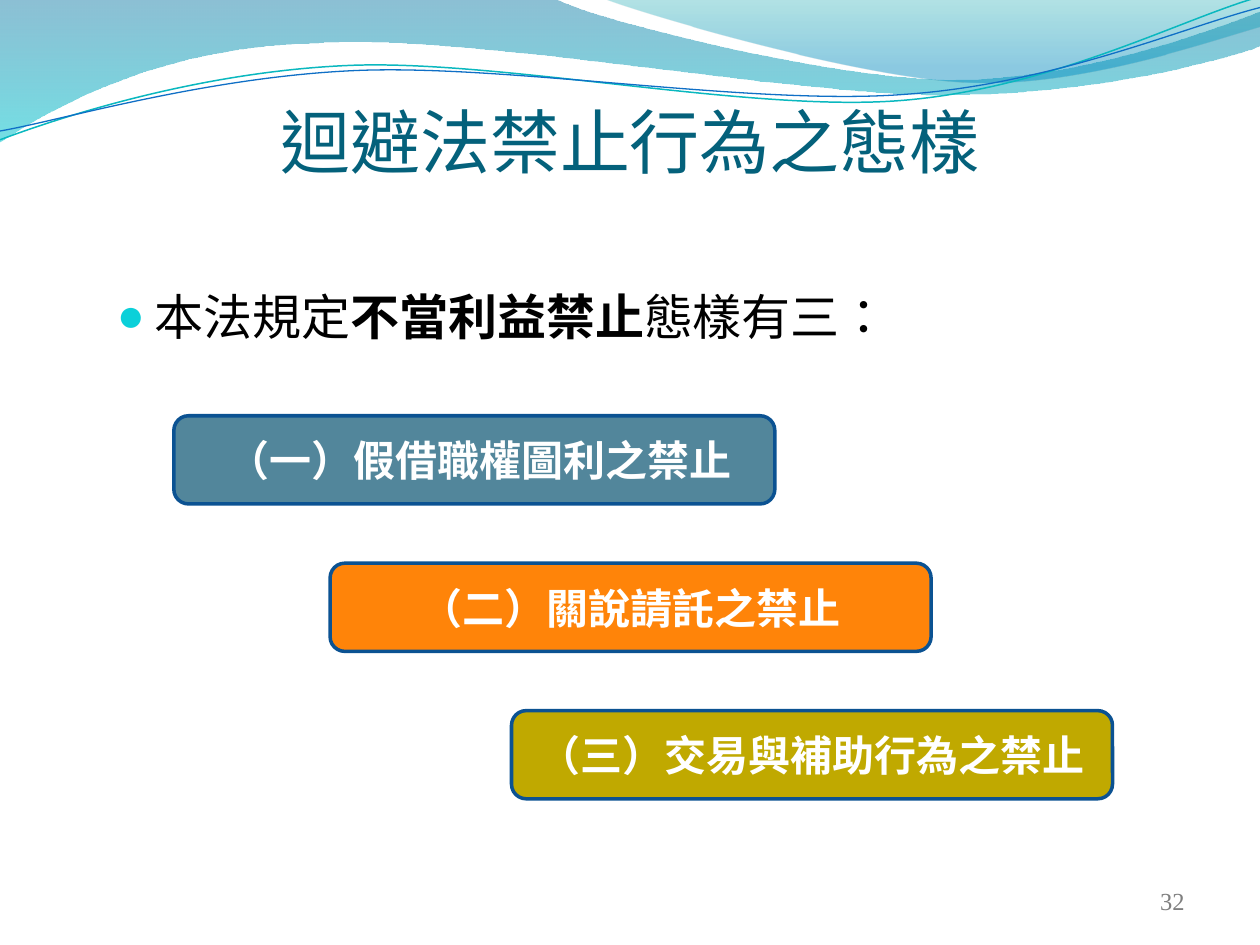
from lxml import etree
from pptx import Presentation, util as u
from pptx.dml.color import RGBColor
from pptx.enum import shapes, text
from pptx.oxml import ns, parse_xml

WIDE, HIGH = 10, 7.5
HAN = "Noto Sans CJK SC"
HUES = {"title": "04617B", "body": "000000", "white": "FFFFFF", "page": "7F7F7F",
        "edge": "0B5292", "dot": "0BD0D9", "slate": "004E6C", "orange": "FF8409",
        "olive": "C0A900", "teal": "0AB8BF", "blue": "0F6FC6"}

# Waves: a start point, then steps of one point (line) or three (curve)
BANDS = [
    ([(0, 0), [(4.4, -0.01)],
      [(4.76, 0.17), (6.64, 0.63), (7.58, 0.63)],
      [(8.53, 0.63), (9.58, 0.26), (10, 0.09)], [(10.01, 0.36)],
      [(9.83, 0.44), (8.7, 0.76), (7.46, 0.75)],
      [(6.22, 0.75), (3.82, 0.28), (2.57, 0.34)],
      [(1.29, 0.36), (0.46, 0.83), (-0.01, 1.13)], [(0, 0)]],
     [(0, "0074A1", 45), (100, "00C6CF", 55)]),
    ([(4.79, -0.01), [(5.09, 0.11), (6.82, 0.62), (7.69, 0.65)],
      [(8.56, 0.69), (9.61, 0.32), (10, 0.21)], [(10, 0)], [(4.79, -0.01)]],
     [(0, "00A1A9", 30), (80, "008BBF", 45)]),
]
LINES = [
    ([(0, 1.11), [(0.48, 0.93), (1.58, 0.57), (2.77, 0.52)],
      [(3.95, 0.47), (5.93, 0.89), (7.13, 0.8)],
      [(8.33, 0.71), (9.38, 0.15), (9.98, -0.02)]], "teal", 0.85),
    ([(0, 1.04), [(0.47, 0.96), (1.64, 0.61), (2.83, 0.56)],
      [(4.03, 0.51), (5.97, 0.84), (7.17, 0.75)],
      [(8.36, 0.67), (9.41, 0.21), (10, 0.06)]], "blue", 0.75),
]


def hue(name):
    return RGBColor.from_string(HUES[name])


def put(obj, vals):
    for key, val in vals.items():
        setattr(obj, key, val)


def area(x, y, w, h):
    """Turn shares of the slide into lengths."""
    return [u.Inches(round(n * side, 2))
            for n, side in zip((x, y, w, h), (WIDE, HIGH) * 2)]


def wave(slide, path, close):
    """Draw a freeform through the step ends, then bend the curved steps."""
    start, *steps = path
    ends = [[u.Inches(n) for n in pt] for pt in (start, *(s[-1] for s in steps))]
    pen = slide.shapes.build_freeform(*ends[0], scale=1.0)
    pen.add_line_segments(ends[1:], close=close)
    shape = pen.convert_to_shape()
    shape.shadow.inherit = False
    parts = list(shape.element.spPr.iter(ns.qn("a:lnTo")))
    for part, step in zip(parts, steps):
        if len(step) == 1:
            continue
        bend = etree.Element(ns.qn("a:cubicBezTo"))
        for x, y in step:
            pt = etree.SubElement(bend, ns.qn("a:pt"))
            pt.set("x", str(u.Inches(x) - shape.left))
            pt.set("y", str(u.Inches(y) - shape.top))
        part.getparent().replace(part, bend)
    return shape


def band(slide, path, stops):
    shape = wave(slide, path, True)
    shape.line.fill.background()
    marks = "".join(
        f'<a:gs pos="{pos * 1000}"><a:srgbClr val="{tone}">'
        f'<a:alpha val="{alpha * 1000}"/></a:srgbClr></a:gs>'
        for pos, tone, alpha in stops)
    grad = parse_xml(f'<a:gradFill {ns.nsdecls("a")} rotWithShape="1"><a:gsLst>{marks}'
                     '</a:gsLst><a:lin ang="5400000" scaled="0"/></a:gradFill>')
    shape.element.spPr.find(ns.qn("a:custGeom")).addnext(grad)


def curve(slide, path, tone, width):
    shape = wave(slide, path, False)
    shape.fill.background()
    shape.line.color.rgb = hue(tone)
    shape.line.width = u.Pt(width)


def write(shape, runs, size, tone, font, align, anchor):
    """Fill a shape with one paragraph of (words, bold) runs."""
    frame = shape.text_frame
    put(frame, {"word_wrap": True, "vertical_anchor": anchor})
    para = frame.paragraphs[0]
    para.alignment = align
    for words, bold in runs:
        run = para.add_run()
        run.text = words
        put(run.font, {"size": u.Pt(size), "bold": bold, "name": font})
        run.font.color.rgb = hue(tone)
        props = run.font._element
        props.set("lang", "zh-TW")
        etree.SubElement(props, ns.qn("a:ea")).set("typeface", HAN)
    return para


def label(slide, box, *look):
    shape = slide.shapes.add_textbox(*area(*box))
    return shape, write(shape, *look)


def bullet(para):
    props = para._p.get_or_add_pPr()
    props.set("marL", str(u.Inches(0.3)))
    props.set("indent", str(-u.Inches(0.3)))
    for xml in (f'<a:buClr {{}}><a:srgbClr val="{HUES["dot"]}"/></a:buClr>',
                '<a:buSzPct {} val="95000"/>', '<a:buFont {} typeface="Arial"/>',
                '<a:buChar {} char="●"/>'):
        props.append(parse_xml(xml.format(ns.nsdecls("a"))))


def card(slide, x, row, words, tone, alpha):
    box = area(x, 0.44 + 0.156 * row, 0.477, 0.0935)
    shape = slide.shapes.add_shape(shapes.MSO_SHAPE.ROUNDED_RECTANGLE, *box)
    shape.shadow.inherit = False
    shape.fill.solid()
    shape.fill.fore_color.rgb = hue(tone)
    if alpha < 100:
        clr = shape.element.spPr.find(".//" + ns.qn("a:srgbClr"))
        etree.SubElement(clr, ns.qn("a:alpha")).set("val", str(alpha * 1000))
    shape.line.color.rgb = hue("edge")
    shape.line.width = u.Pt(2)
    write(shape, [(words, True)], 24, "white", "Arial",
          text.PP_ALIGN.CENTER, text.MSO_ANCHOR.MIDDLE)


def main():
    prs = Presentation()
    put(prs, {"slide_width": u.Inches(WIDE), "slide_height": u.Inches(HIGH)})
    slide = prs.slides.add_slide(prs.slide_layouts[6])
    side, spot = text.PP_ALIGN, text.MSO_ANCHOR

    # Waves along the top
    for path, stops in BANDS:
        band(slide, path, stops)
    for path, tone, width in LINES:
        curve(slide, path, tone, width)

    # Lead sentence and title
    runs = [("本法規定", False), ("不當利益禁止", True), ("態樣有三：", False)]
    body, para = label(slide, (0.083, 0.223, 0.851, 0.704), runs, 28, "body", HAN,
                       side.LEFT, spot.TOP)
    body.text_frame.margin_top = u.Inches(0.6)
    bullet(para)
    label(slide, (0.033, 0.033, 0.934, 0.167), [("迴避法禁止行為之態樣", False)],
          40, "title", "Arial", side.CENTER, spot.BOTTOM)

    # Stepped cards, lowest at the back
    card(slide, 0.406, 2, "（三）交易與補助行為之禁止", "olive", 100)
    card(slide, 0.262, 1, "（二）關說請託之禁止", "orange", 100)
    card(slide, 0.138, 0, " （一）假借職權圖利之禁止", "slate", 68)

    # Page number
    label(slide, (0.717, 0.927, 0.233, 0.053), [("32", False)], 14, "page",
          "Times New Roman", side.RIGHT, spot.MIDDLE)
    prs.save("out.pptx")


if __name__ == "__main__":
    main()
